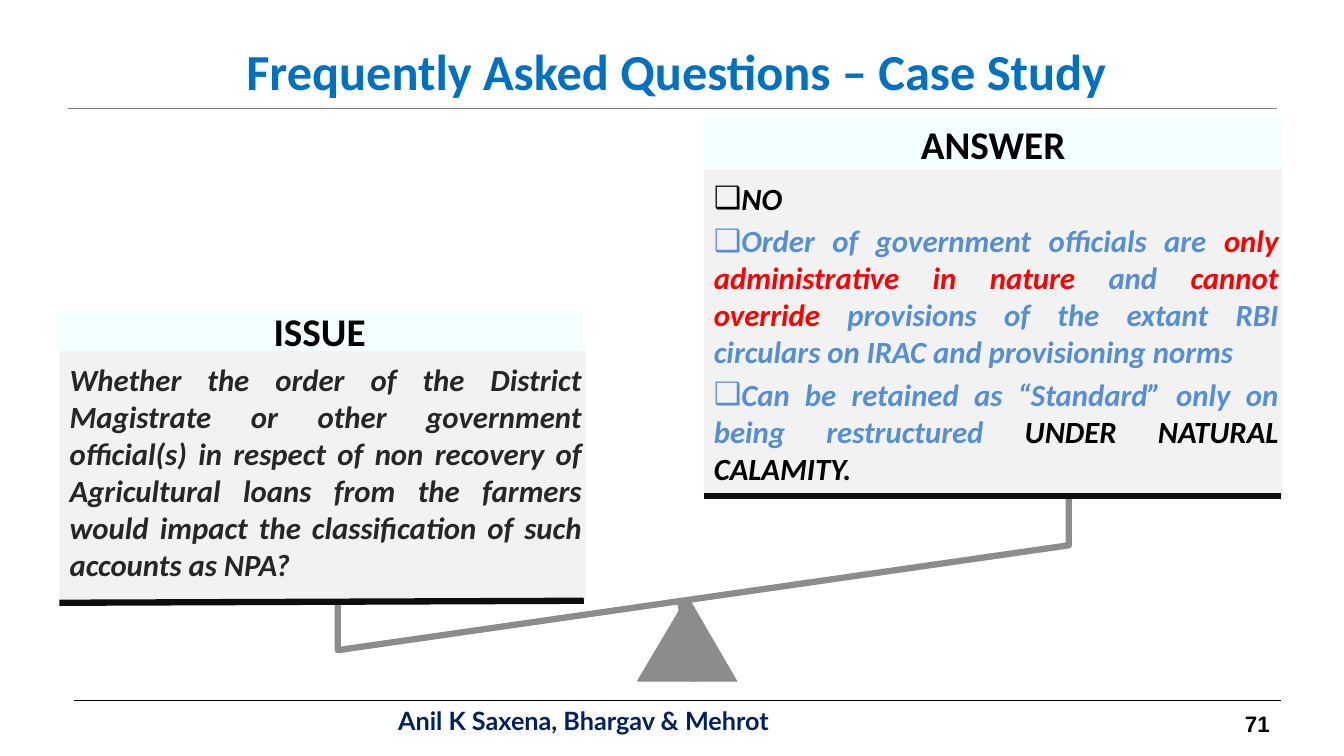
from pptx import Presentation
from pptx.dml.color import RGBColor
from pptx.enum.shapes import MSO_CONNECTOR as MC, MSO_SHAPE as MS
from pptx.enum.text import MSO_ANCHOR as MA, MSO_AUTO_SIZE as MAS, PP_ALIGN as PA
from pptx.oxml.ns import qn
from pptx.util import Inches, Pt
from lxml import etree


def rgb(color):
    return RGBColor.from_string(color)


def style(p, size, font, colors, italic=False):
    for r, color in zip(p.runs, colors):
        r.font.size, r.font.name = Pt(size), font
        r.font.bold, r.font.italic = True, italic
        r.font.color.rgb = rgb(color)


BLACK, BLUE, RED, GREY = "000000", "558ED5", "FF0000", "8C8C8C"
prs = Presentation()
prs.slide_width, prs.slide_height = Inches(13.33), Inches(7.5)
s = prs.slides.add_slide(prs.slide_layouts[3])

title = s.shapes.title
title.left, title.top, title.width, title.height = map(Inches, (0.71, 0.33, 12, 0.74))
tf = title.text_frame
tf.text = "Frequently Asked Questions – Case Study"
tf.auto_size, tf.vertical_anchor = MAS.NONE, MA.MIDDLE
tf.paragraphs[0].alignment = PA.CENTER
style(tf.paragraphs[0], 36, "Calibri", ["0070C0"])

issue = [[("Whether the order of the District Magistrate or other government "
           "official(s) in respect of non recovery of Agricultural loans from the "
           "farmers would impact the classification of such accounts as NPA?", "262626")]]
answer = [
    [("NO", BLACK)],
    [("Order of government officials are ", BLUE),
     ("only administrative in nature ", RED),
     ("and ", BLUE),
     ("cannot override ", RED),
     ("provisions of the extant RBI circulars on IRAC and provisioning norms", BLUE)],
    [("Can be retained as “Standard” only on being restructured ", BLUE),
     ("UNDER NATURAL CALAMITY.", BLACK)],
]
panels = [
    (1, "ISSUE", 0.56, 0.59, 3.09, 0.39, 5.22, 2.47, issue, None),
    (2, "ANSWER", 6.98, 6.98, 1.17, 0.51, 5.74, 3.24, answer, "❑"),
]
for idx, head, head_x, x, y, head_h, w, h, paras, bullet in panels:
    sp = s.shapes.add_shape(MS.RECTANGLE, Inches(head_x), Inches(y), Inches(w), Inches(head_h))
    sp.shadow.inherit = False
    sp.fill.solid()
    sp.fill.fore_color.rgb = rgb("F3FEFF")
    sp.line.fill.background()
    tf = sp.text_frame
    tf.text = head
    tf.vertical_anchor = MA.MIDDLE
    tf.margin_left = tf.margin_right = tf.margin_top = tf.margin_bottom = Inches(0.04)
    tf.paragraphs[0].alignment = PA.CENTER
    style(tf.paragraphs[0], 28, "Calibri", [BLACK])

    body = s.placeholders[idx]
    body.left, body.top, body.width, body.height = map(Inches, (x, y + head_h, w, h))
    body.fill.solid()
    body.fill.fore_color.rgb = rgb("F2F2F2")
    tf = body.text_frame
    tf.auto_size, tf.vertical_anchor, tf.word_wrap = MAS.NONE, MA.TOP, True
    tf.margin_left = tf.margin_top = Inches(0.1)
    tf.margin_right = tf.margin_bottom = Inches(0.04)
    for i, runs in enumerate(paras):
        p = tf.add_paragraph() if i else tf.paragraphs[0]
        p.alignment, p.space_before, p.line_spacing = PA.JUSTIFY, Pt(4), 1.0
        for text, color in runs:
            p.add_run().text = text
        style(p, 22, "Calibri", [color for text, color in runs], True)
        pPr = p._p.get_or_add_pPr()
        pPr.set("marL", "0")
        pPr.set("indent", "0")
        if bullet:
            etree.SubElement(pPr, qn("a:buChar")).set("char", bullet)
        else:
            etree.SubElement(pPr, qn("a:buNone"))

outlines = [
    ([(6.3, 6.77), (6.78, 5.96), (6.86, 5.96), (7.33, 6.77)], True, "FFFFFF", 1),
    ([(3.35, 5.98), (3.35, 6.45), (10.6, 5.41), (10.6, 4.94)], False, GREY, 4.5),
]
for points, closed, color, width in outlines:
    start, *rest = [(Inches(x), Inches(y)) for x, y in points]
    outline = s.shapes.build_freeform(*start)
    outline.add_line_segments(rest, close=closed)
    sp = outline.convert_to_shape()
    sp.shadow.inherit = False
    if closed:
        sp.fill.solid()
        sp.fill.fore_color.rgb = rgb(GREY)
    else:
        sp.fill.background()
    sp.line.color.rgb, sp.line.width = rgb(color), Pt(width)
    etree.SubElement(sp.line._get_or_add_ln(), qn("a:round"))

lines = [
    (0.67, 1.08, 12.67, 1.08, "7F7F7F", 0.75),
    (0.73, 6.95, 12.71, 6.95, BLACK, 0.75),
    (0.59, 5.98, 5.79, 5.96, "0D0D0D", 4.5),
    (6.98, 4.92, 12.71, 4.92, "0D0D0D", 4.5),
    (6.91, 6.76, 6.77, 5.99, GREY, 4.5),
    (6.88, 6.76, 6.75, 5.99, GREY, 4.5),
]
for x1, y1, x2, y2, color, width in lines:
    c = s.shapes.add_connector(MC.STRAIGHT, *map(Inches, (x1, y1, x2, y2)))
    c.line.color.rgb, c.line.width = rgb(color), Pt(width)
    etree.SubElement(c._element.spPr, qn("a:effectLst"))

footers = [
    ("Anil K Saxena, Bhargav & Mehrot", 3.85, 7.03, 6.01, 0.24, 18, "Lato", "002060", MA.MIDDLE),
    ("71", 12.25, 7, 0.67, 0.33, 16, "Arial", BLACK, MA.TOP),
]
for text, x, y, w, h, size, font, color, anchor in footers:
    tf = s.shapes.add_textbox(*map(Inches, (x, y, w, h))).text_frame
    tf.text = text
    tf.word_wrap, tf.vertical_anchor = True, anchor
    style(tf.paragraphs[0], size, font, [color])

prs.save("out.pptx")
